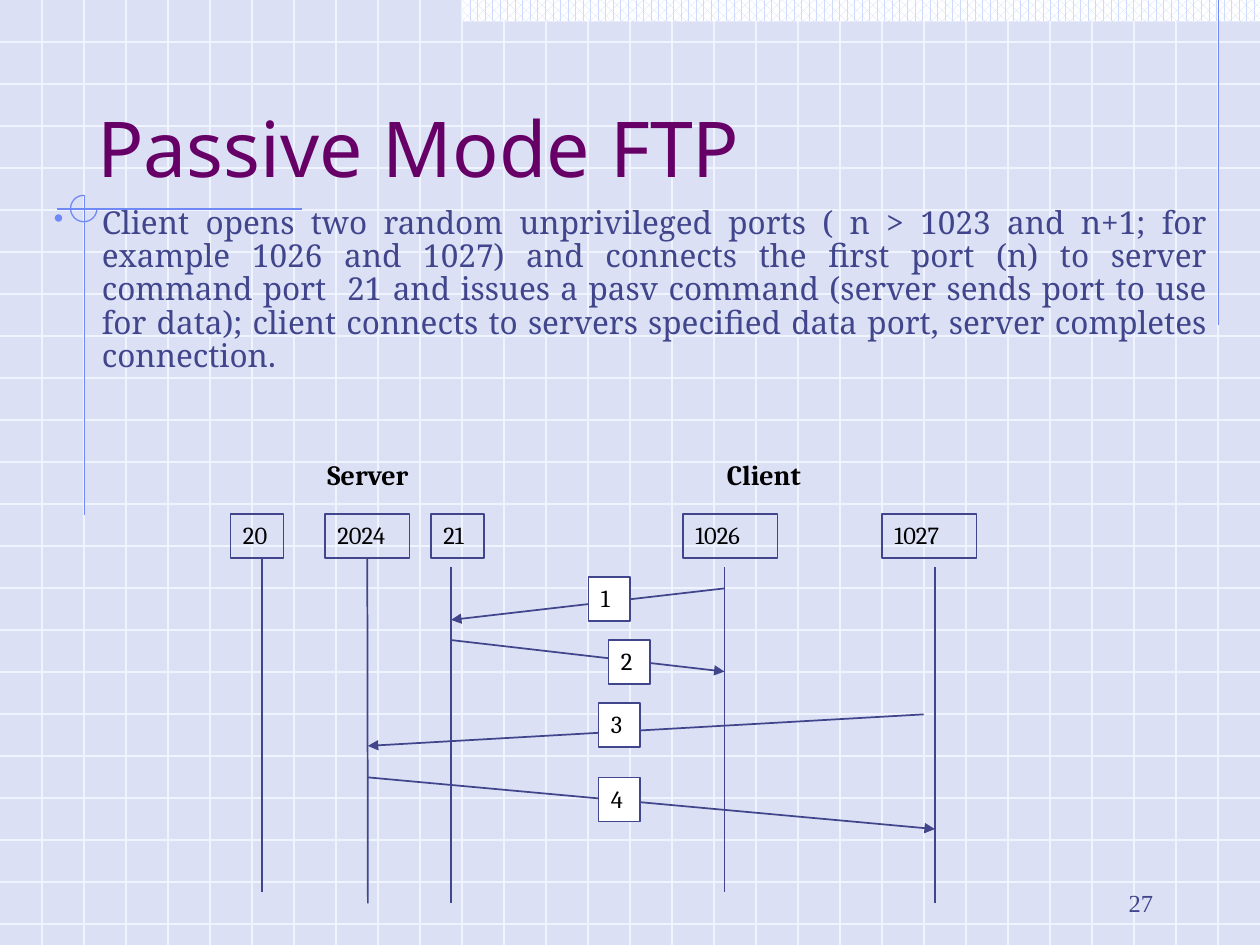
from lxml.etree import SubElement
from pptx import Presentation
from pptx.dml.color import RGBColor
from pptx.enum.dml import MSO_PATTERN_TYPE as Pattern
from pptx.enum.shapes import MSO_CONNECTOR, MSO_SHAPE
from pptx.enum.text import MSO_ANCHOR, PP_ALIGN
from pptx.oxml.ns import qn
from pptx.util import Inches, Pt

hex_color = RGBColor.from_string
INK, ACCENT, GRID = "40458C", "6F89F7", "F0F4FE"


def add_line(x1, y1, x2, y2, color=INK, width=1, arrow=False):
    line = page.shapes.add_connector(
        MSO_CONNECTOR.STRAIGHT, Inches(x1), Inches(y1), Inches(x2), Inches(y2))
    line.line.color.rgb = hex_color(color)
    line.line.width = Pt(width)
    if arrow:
        SubElement(line.line._get_or_add_ln(), qn("a:tailEnd"), type="triangle")
    SubElement(line.element.spPr, qn("a:effectLst"))
    return line


def write(box, text, size=14, font="Cambria", color="000000", bold=False,
          align=PP_ALIGN.LEFT, anchor=MSO_ANCHOR.TOP):
    frame = box.text_frame
    frame.word_wrap = True
    frame.vertical_anchor = anchor
    para = frame.paragraphs[0]
    para.alignment = align
    span = para.add_run()
    span.text = text
    span.font.size = Pt(size)
    span.font.name = font
    span.font.bold = bold
    span.font.color.rgb = hex_color(color)
    return para


deck = Presentation()
deck.slide_width, deck.slide_height = Inches(10), Inches(7.5)
page = deck.slides.add_slide(deck.slide_layouts[5])
page.background.fill.solid()
page.background.fill.fore_color.rgb = hex_color("DBE0F5")

# Background grid, three cells to the inch
for row in range(1, 23):
    add_line(0, row / 3, 10, row / 3, GRID, 0.75)
for column in range(1, 30):
    add_line(column / 3, 0, column / 3, 7.5, GRID, 0.75)

# Top band, rules and open circle
band = page.shapes.add_shape(
    MSO_SHAPE.RECTANGLE, Inches(3.67), 0, Inches(6.33), Inches(0.17))
band.shadow.inherit = False
band.line.fill.background()
band.fill.patterned()
band.fill.pattern = Pattern.PERCENT_60
band.fill.fore_color.rgb = hex_color("CFDBFD")
band.fill.back_color.rgb = hex_color("FFFFFF")

for ends in [(9.67, 0, 9.67, 2.58), (2.4, 1.66, 0.45, 1.66), (0.67, 1.55, 0.67, 4.09)]:
    add_line(*ends, ACCENT, 0.75)

circle = page.shapes.add_shape(
    MSO_SHAPE.ARC, Inches(0.56), Inches(1.55), Inches(0.21), Inches(0.21))
circle.shadow.inherit = False
circle.adjustments[0] = 0
circle.adjustments[1] = 162  # 270 degrees
circle.fill.background()
circle.line.color.rgb = hex_color(ACCENT)
circle.line.width = Pt(0.75)

# Title, brought in front of the grid
title = page.shapes.title
title.element.getparent().append(title.element)
title.left, title.top = Inches(0.67), Inches(0.33)
title.width, title.height = Inches(8.5), Inches(1.25)
write(title, "Passive Mode FTP", size=44, font="Noto Sans", color="660066",
      anchor=MSO_ANCHOR.BOTTOM)

body = page.shapes.add_textbox(Inches(0.33), Inches(1.6), Inches(9.35), Inches(1.33))
para = write(
    body,
    "Client opens two random unprivileged ports ( n > 1023 and n+1; for example 1026 "
    "and 1027) and connects the first port (n) to server command port  21 and issues a "
    "pasv command (server sends port to use for data); client connects to servers "
    "specified data port, server completes connection.",
    size=18, font="Noto Serif", color=INK, align=PP_ALIGN.JUSTIFY)
para.line_spacing = 0.88
bullet = para._p.get_or_add_pPr()
bullet.set("marL", str(Inches(0.38)))
bullet.set("indent", str(Inches(-0.38)))
SubElement(SubElement(bullet, qn("a:buClr")), qn("a:srgbClr"), val=ACCENT)
SubElement(bullet, qn("a:buSzPct"), val="90000")
SubElement(bullet, qn("a:buChar"), char="•")

number = page.shapes.add_textbox(Inches(7.17), Inches(6.83), Inches(2.08), Inches(0.5))
write(number, "27", font="Times New Roman", color=INK, align=PP_ALIGN.RIGHT,
      anchor=MSO_ANCHOR.BOTTOM)

# Sequence diagram
for name, left in [("Server", 2.5), ("Client", 5.67)]:
    label = page.shapes.add_textbox(Inches(left), Inches(3.58), Inches(1.42), Inches(0.37))
    write(label, name, size=16, bold=True)

lifelines = [(2.08, 4.42, 7.08), (2.92, 4.43, 7.17), (3.58, 4.5, 7.17),
             (5.75, 4.5, 7.08), (7.42, 4.5, 7.17)]
lines = [add_line(x, top, x, bottom) for x, top, bottom in lifelines]

messages = [(5.75, 4.67, 3.58, 4.92), (3.58, 5.08, 5.75, 5.33),
            (7.33, 5.67, 2.92, 5.92), (2.92, 6.17, 7.42, 6.58)]
for ends in messages:
    add_line(*ends, arrow=True)

ports = [("20", 1.83, 4.08, 0.42), ("2024", 2.58, 4.08, 0.67), ("21", 3.42, 4.08, 0.42),
         ("1026", 5.42, 4.08, 0.75), ("1027", 7, 4.08, 0.75)]
steps = [("1", 4.67, 4.58, 0.33), ("2", 4.83, 5.08, 0.33),
         ("3", 4.75, 5.58, 0.33), ("4", 4.75, 6.17, 0.33)]
for text, left, top, width in ports + steps:
    box = page.shapes.add_shape(
        MSO_SHAPE.RECTANGLE, Inches(left), Inches(top), Inches(width), Inches(0.35))
    box.shadow.inherit = False
    box.line.color.rgb = hex_color(INK)
    box.line.width = Pt(1)
    if top == 4.08:
        box.fill.background()
    else:
        box.fill.solid()
        box.fill.fore_color.rgb = hex_color("FFFFFF")
    write(box, text)
    if text == "2024":
        lines[1].begin_connect(box, 2)

deck.save("out.pptx")
